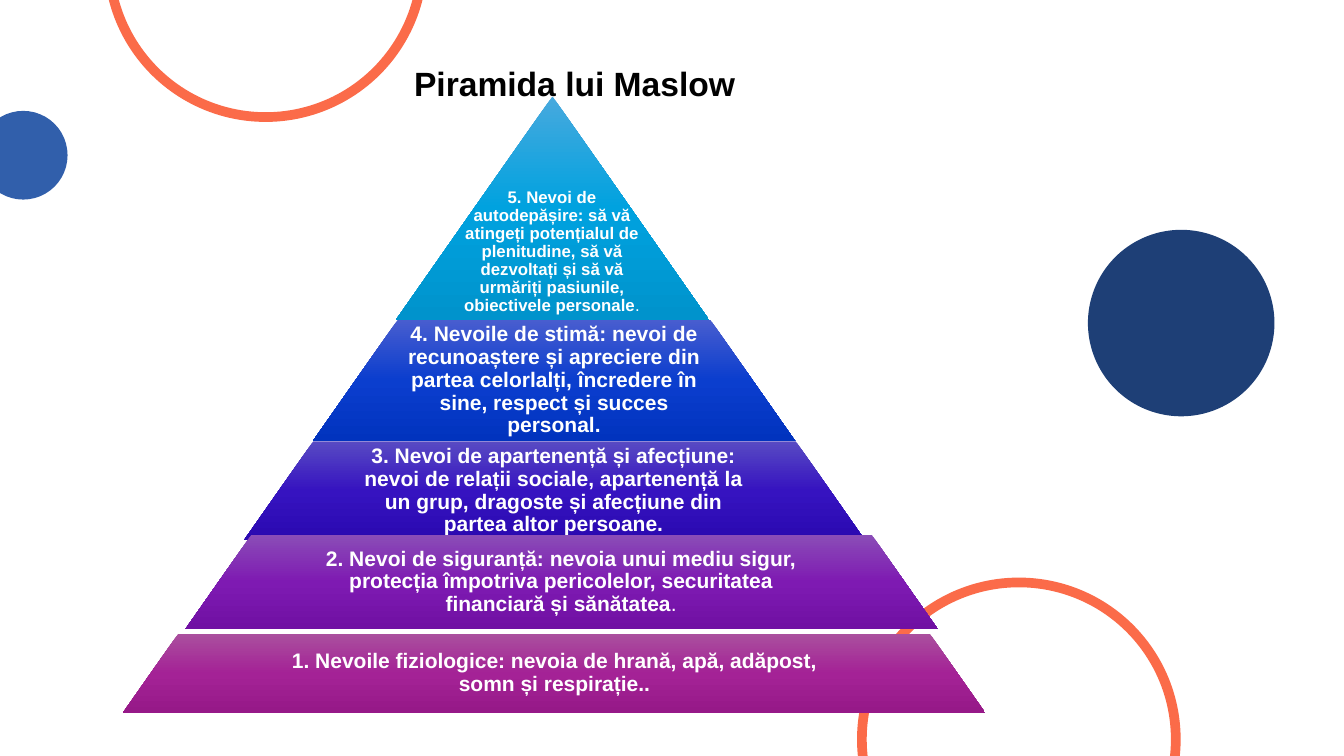
import copy

import pptx
import pptx.dml.color
import pptx.enum.shapes
import pptx.enum.text
import pptx.util

Inches = pptx.util.Inches
RGBColor = pptx.dml.color.RGBColor
SHAPES = pptx.enum.shapes.MSO_SHAPE
ANCHOR = pptx.enum.text.MSO_ANCHOR

BLACK = RGBColor(0x00, 0x00, 0x00)
WHITE = RGBColor(0xFF, 0xFF, 0xFF)
NAVY = RGBColor(0x1E, 0x3F, 0x76)
BLUE = RGBColor(0x31, 0x5F, 0xAB)
CORAL = RGBColor(0xFB, 0x6B, 0x49)
SKY = (RGBColor(0x47, 0xA9, 0xDE), RGBColor(0x00, 0xA2, 0xDF), RGBColor(0x00, 0x93, 0xCC))
COBALT = (RGBColor(0x48, 0x5D, 0xCF), RGBColor(0x0B, 0x3E, 0xCE), RGBColor(0x01, 0x33, 0xBE))
INDIGO = (RGBColor(0x58, 0x4A, 0xC3), RGBColor(0x36, 0x13, 0xC0), RGBColor(0x2A, 0x09, 0xB0))
VIOLET = (RGBColor(0x8A, 0x4C, 0xB7), RGBColor(0x7E, 0x1A, 0xB2), RGBColor(0x70, 0x10, 0xA3))
MAGENTA = (RGBColor(0xAA, 0x4F, 0x9E), RGBColor(0xA4, 0x22, 0x96), RGBColor(0x96, 0x19, 0x88))


def write(frame, text, size, color, spacing, anchor, margins, light_end=""):
    """Fill a text frame with one centred bold paragraph and an optional light ending."""
    frame.word_wrap = True
    frame.auto_size = pptx.enum.text.MSO_AUTO_SIZE.NONE
    frame.vertical_anchor = anchor
    frame.margin_left = frame.margin_right = Inches(margins[0])
    frame.margin_top = frame.margin_bottom = Inches(margins[1])
    paragraph = frame.paragraphs[0]
    paragraph.alignment = pptx.enum.text.PP_ALIGN.CENTER
    paragraph.line_spacing = spacing
    for part, bold in ((text, True), (light_end, False)):
        if part:
            run = paragraph.add_run()
            run.text = part
            run.font.name = "Arial"
            run.font.size = pptx.util.Pt(size)
            run.font.bold = bold
            run.font.color.rgb = color


presentation = pptx.Presentation()
presentation.slide_width = Inches(13.33)
presentation.slide_height = Inches(7.5)
slide = presentation.slides.add_slide(presentation.slide_layouts[5])

# Decorative discs and rings
for preset, left, top, diameter, color in (
    (SHAPES.OVAL, 10.79, 2.28, 1.85, NAVY),
    (SHAPES.OVAL, -0.21, 1.1, 0.88, BLUE),
    (SHAPES.DONUT, 8.5, 5.73, 3.21, CORAL),
    (SHAPES.DONUT, 1.03, -2, 3.21, CORAL),
):
    circle = slide.shapes.add_shape(
        preset, Inches(left), Inches(top), Inches(diameter), Inches(diameter))
    circle.shadow.inherit = False
    circle.fill.solid()
    circle.fill.fore_color.rgb = color
    circle.line.fill.background()
    if preset == SHAPES.DONUT:
        circle.adjustments[0] = 0.03

# Title
title = slide.shapes.title
title.left, title.top = Inches(2.9), Inches(0.55)
title.width, title.height = Inches(5.6), Inches(0.51)
write(title.text_frame, "Piramida lui Maslow", size=24, color=BLACK,
      spacing=1.07, anchor=ANCHOR.TOP, margins=(0.1, 0.05))

# Pyramid levels from the top down: band box, text box, gradient, size, text, light ending
levels = (
    ((3.93, 0.96, 3.1, 2.21), (4.53, 1.84, 1.89, 1.32), SKY, 12,
     "5. Nevoi de autodepășire: să vă atingeți potențialul de plenitudine, "
     "să vă dezvoltați și să vă urmăriți pasiunile, obiectivele personale", "."),
    ((3.1, 3.17, 4.79, 1.21), (3.94, 3.17, 3.11, 1.21), COBALT, 15,
     "4. Nevoile de stimă: nevoi de recunoaștere și apreciere din partea "
     "celorlalți, încredere în sine, respect și succes personal.", ""),
    ((2.42, 4.38, 6.16, 0.98), (3.49, 4.38, 4, 0.98), INDIGO, 15,
     "3. Nevoi de apartenență și afecțiune: nevoi de relații sociale, "
     "apartenență la un grup, dragoste și afecțiune din partea altor persoane.", ""),
    ((1.84, 5.31, 7.46, 0.93), (3.14, 5.31, 4.85, 0.93), VIOLET, 15,
     "2. Nevoi de siguranță: nevoia unui mediu sigur, protecția împotriva "
     "pericolelor, securitatea financiară și sănătatea", "."),
    ((1.22, 6.29, 8.55, 0.78), (2.72, 6.29, 5.56, 0.78), MAGENTA, 15,
     "1. Nevoile fiziologice: nevoia de hrană, apă, adăpost, somn și respirație..", ""),
)
for band_box, need_box, gradient, size, need, light_end in levels:
    band = slide.shapes.add_shape(SHAPES.TRAPEZOID, *map(Inches, band_box))
    band.adjustments[0] = 0.7
    band.shadow.inherit = False
    band.line.fill.background()
    band.fill.gradient()
    band.fill.gradient_angle = 270
    # A third stop is cloned from the first
    stop_list = band._element.spPr.find(".//" + pptx.oxml.ns.qn("a:gsLst"))
    stop_list.insert(1, copy.deepcopy(stop_list[0]))
    for stop, position, color in zip(band.fill.gradient_stops, (0, 0.5, 1), gradient):
        stop.position = position
        stop.color.rgb = color

    need_text = slide.shapes.add_textbox(*map(Inches, need_box))
    write(need_text.text_frame, need, size=size, color=WHITE, spacing=0.9,
          anchor=ANCHOR.MIDDLE, margins=(0.02, 0.02), light_end=light_end)

presentation.save("out.pptx")
